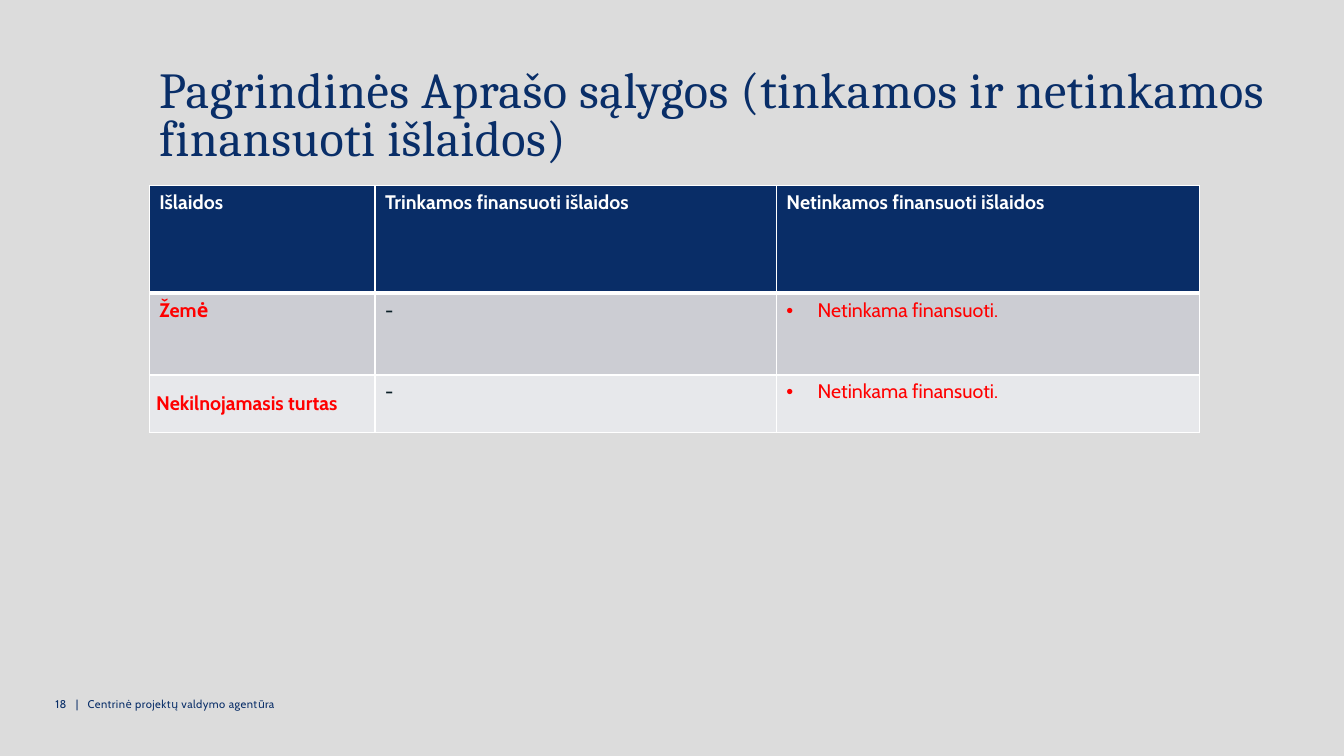
from pptx import Presentation
from pptx.dml.color import RGBColor
from pptx.enum.text import MSO_ANCHOR
from pptx.oxml.ns import qn
from pptx.util import Inches, Pt
from lxml.etree import SubElement

NAVY, WHITE, RED, INK = "092E68", "FFFFFF", "FF0000", "0A1E26"
HEADER_FILL, ROW_FILLS = "092D67", ("CCCDD3", "E7E8EB")
COLUMN_WIDTHS = (2.24, 3.98, 4.2)
ROW_HEIGHTS = (1.07, 0.81, 0.57)
HEADINGS = ("Išlaidos", "Trinkamos finansuoti išlaidos", "Netinkamos finansuoti išlaidos")
EXPENSES = ("Žemė", "Nekilnojamasis turtas")


def color(value):
    """Turn a hex string into a colour."""
    return RGBColor.from_string(value)


def write(frame, text, size=14, font="Cabin", ink=INK, bold=False, tracking=0, bullet=None):
    """Write one formatted paragraph into a text frame and return it."""
    para = frame.paragraphs[0]
    if bullet:
        properties = para._p.get_or_add_pPr()
        properties.set("marL", str(Inches(0.31)))
        properties.set("indent", str(-Inches(0.31)))
        SubElement(properties, qn("a:buFont"), typeface="Arial")
        SubElement(properties, qn("a:buChar"), char=bullet)
    span = para.add_run()
    span.text = text
    span.font.size = Pt(size)
    span.font.name = font
    span.font.bold = bold
    span.font.color.rgb = color(ink)
    if tracking:
        span.font._element.set("spc", str(round(tracking * 100)))
    return para


def add_text(page, left, top, width, height, text, **style):
    """Add a wrapping text box and return its paragraph."""
    box = page.shapes.add_textbox(Inches(left), Inches(top), Inches(width), Inches(height))
    box.text_frame.word_wrap = True
    return write(box.text_frame, text, **style)


def set_borders(cell, top=1, bottom=1):
    """Draw white borders around a cell."""
    properties = cell._tc.get_or_add_tcPr()
    sides = {"a:lnL": 1, "a:lnR": 1, "a:lnT": top, "a:lnB": bottom}
    for position, (side, width) in enumerate(sides.items()):
        line = SubElement(properties, qn(side), w=str(Pt(width)))
        fill = SubElement(line, qn("a:solidFill"))
        SubElement(fill, qn("a:srgbClr"), val=WHITE)
        properties.insert(position, line)


def fill_cell(cell, text, fill, top=1, bottom=1, **style):
    """Fill a table cell with colour, borders and text."""
    cell.fill.solid()
    cell.fill.fore_color.rgb = color(fill)
    set_borders(cell, top, bottom)
    write(cell.text_frame, text, **style)


def add_expense_table(page):
    """Add the table of eligible and ineligible expenses."""
    table = page.shapes.add_table(
        len(ROW_HEIGHTS), len(COLUMN_WIDTHS), Inches(1.48), Inches(1.84),
        Inches(sum(COLUMN_WIDTHS)), Inches(sum(ROW_HEIGHTS))).table
    for column, width in zip(table.columns, COLUMN_WIDTHS):
        column.width = Inches(width)
    for row, height in zip(table.rows, ROW_HEIGHTS):
        row.height = Inches(height)
    for index, heading in enumerate(HEADINGS):
        fill_cell(table.cell(0, index), heading, HEADER_FILL, bottom=3, ink=WHITE, bold=True)
    for row, (expense, fill) in enumerate(zip(EXPENSES, ROW_FILLS), start=1):
        top = 3 if row == 1 else 1
        fill_cell(table.cell(row, 0), expense, fill, top, ink=RED, bold=True)
        fill_cell(table.cell(row, 1), "-", fill, top)
        fill_cell(table.cell(row, 2), "Netinkama finansuoti.", fill, top, ink=RED, bullet="•")
    property_cell = table.cell(2, 0)
    property_cell.vertical_anchor = MSO_ANCHOR.MIDDLE
    property_cell.margin_left = property_cell.margin_right = Inches(0.07)
    property_cell.margin_top = property_cell.margin_bottom = 0


def main():
    """Build the slide and save it."""
    deck = Presentation()
    deck.slide_width, deck.slide_height = Inches(13.33), Inches(7.5)
    page = deck.slides.add_slide(deck.slide_layouts[6])
    page.background.fill.solid()
    page.background.fill.fore_color.rgb = color("DCDCDC")
    title = add_text(page, 1.48, 0.64, 11.31, 1.19,
                     "Pagrindinės Aprašo sąlygos (tinkamos ir netinkamos finansuoti išlaidos)",
                     size=36, font="Cambria", ink=NAVY, tracking=0.4)
    title.line_spacing = 0.8
    title.space_after = Pt(12)
    add_text(page, 0.45, 6.87, 3.2, 0.4, "18   |   Centrinė projektų valdymo agentūra",
             size=8, ink=NAVY, tracking=0.3)
    add_expense_table(page)
    deck.save("out.pptx")


if __name__ == "__main__":
    main()
